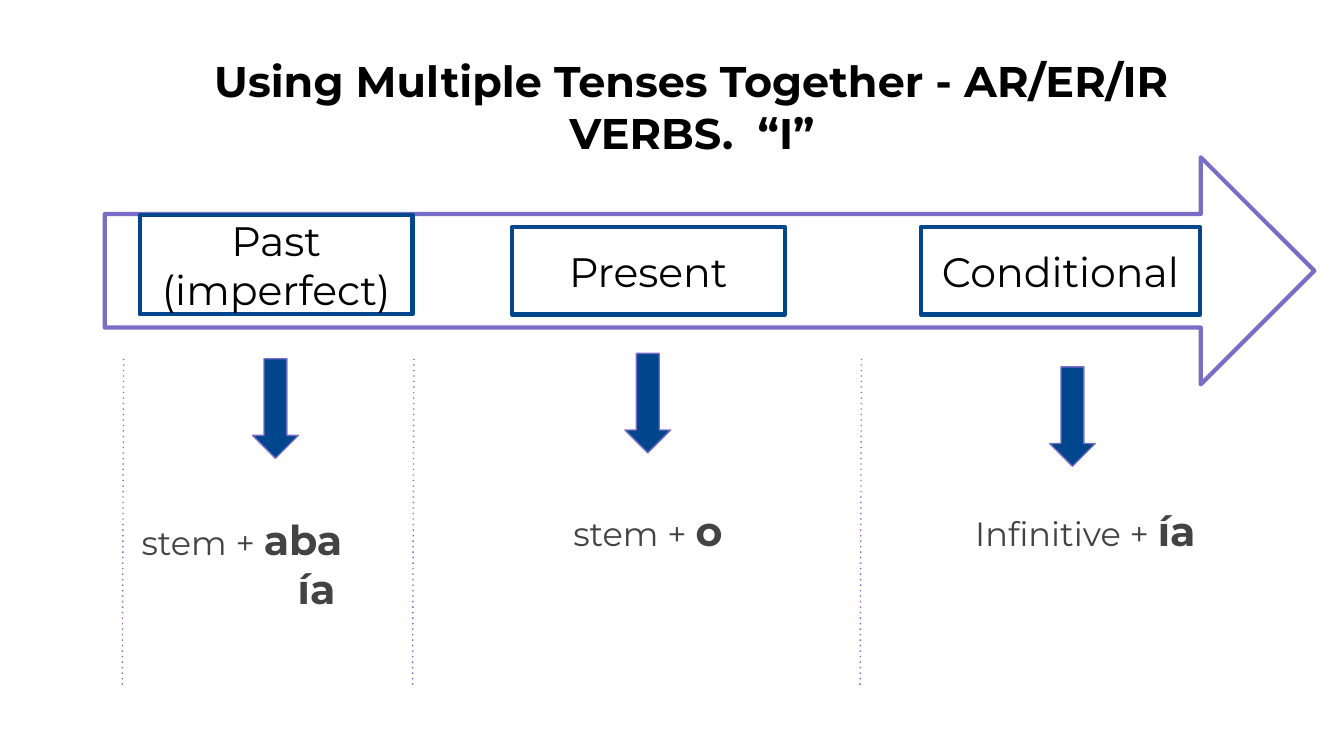
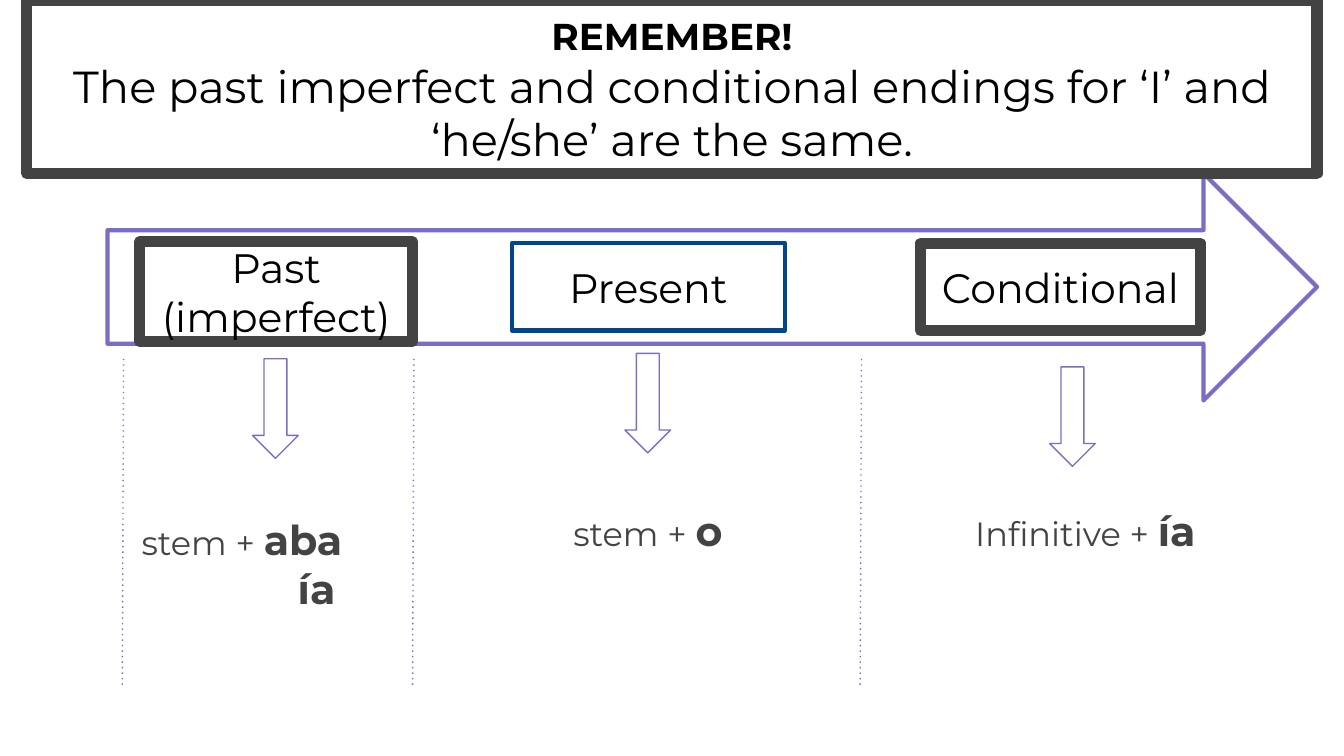
from pptx import Presentation
from pptx.dml.color import RGBColor
from pptx.enum.shapes import MSO_CONNECTOR, MSO_SHAPE
from pptx.enum.text import MSO_ANCHOR, PP_ALIGN
from pptx.oxml.ns import qn
from pptx.util import Inches, Pt
from lxml import etree

BLACK = RGBColor(0x00, 0x00, 0x00)
WHITE = RGBColor(0xFF, 0xFF, 0xFF)
GREY = RGBColor(0x43, 0x43, 0x43)
BLUE = RGBColor(0x00, 0x46, 0x8C)
PURPLE = RGBColor(0x78, 0x6E, 0xC8)

FONT = "Montserrat"
RECT = MSO_SHAPE.RECTANGLE
RIGHT = MSO_SHAPE.RIGHT_ARROW
DOWN = MSO_SHAPE.DOWN_ARROW
STRAIGHT = MSO_CONNECTOR.STRAIGHT
TOP = MSO_ANCHOR.TOP
MIDDLE = MSO_ANCHOR.MIDDLE
CENTER = PP_ALIGN.CENTER


def write(frame, paras, size=22, color=BLACK, bold=False, pad=0.1, anchor=TOP,
          indents=()):
    """Fill a frame; each paragraph is a list of (text, run format) pairs.

    Indents are (left, right) pairs, one for each paragraph."""
    frame.word_wrap = True
    frame.vertical_anchor = anchor
    frame.margin_left = frame.margin_right = Inches(pad)
    frame.margin_top = frame.margin_bottom = Inches(pad)
    for i, runs in enumerate(paras):
        para = frame.paragraphs[0] if i == 0 else frame.add_paragraph()
        para.alignment = CENTER
        if i < len(indents):
            for side, width in zip(("marL", "marR"), indents[i]):
                para._p.get_or_add_pPr().set(side, str(Inches(width)))
        for text, style in runs:
            run = para.add_run()
            run.text = text
            run.font.name = FONT
            run.font.size = Pt(style.get("size", size))
            run.font.bold = style.get("bold", bold)
            run.font.color.rgb = color


class Deck:
    def __init__(self):
        self.prs = Presentation()
        self.prs.slide_width = Inches(10)
        self.prs.slide_height = Inches(10 * 9 / 16)
        self.slide = None

    def page(self):
        self.slide = self.prs.slides.add_slide(self.prs.slide_layouts[6])

    def shape(self, kind, box, line, width, fill=None):
        shape = self.slide.shapes.add_shape(kind, *map(Inches, box))
        shape.shadow.inherit = False
        if fill is None:
            shape.fill.background()
        else:
            shape.fill.solid()
            shape.fill.fore_color.rgb = fill
        shape.line.color.rgb = line
        shape.line.width = Pt(width)
        return shape

    def text(self, box, paras, **style):
        frame = self.slide.shapes.add_textbox(*map(Inches, box)).text_frame
        write(frame, paras, **style)

    def tense(self, name, box, marked):
        line, width = (GREY, 6) if marked else (BLUE, 2.25)
        shape = self.shape(RECT, box, line, width, WHITE)
        write(shape.text_frame, [[(name, {})]], pad=0.05, anchor=MIDDLE)

    def rule(self, x):
        """Dotted line between columns."""
        line = self.slide.shapes.add_connector(
            STRAIGHT, Inches(x), Inches(2.67), Inches(x - 0.01), Inches(5.1))
        line.line.color.rgb = PURPLE
        line.line.width = Pt(0.75)
        props = line._element.spPr
        etree.SubElement(props.find(qn("a:ln")), qn("a:prstDash"), val="dot")
        etree.SubElement(props, qn("a:effectLst"))

    def arrow(self, x, y, fill):
        self.shape(DOWN, (x, y, 0.34, 0.74), PURPLE, 0.75, fill)

    def endings(self, fill):
        """Down arrows, verb endings and column rules."""
        big = {"size": 22, "bold": True}
        self.arrow(1.88, 2.67, fill)
        self.text((0.89, 3.73, 2.32, 1),
                  [[("stem + ", {}), ("aba", big)], [("ía", big)]],
                  size=18, color=GREY, indents=((0, 0.5), (0.61, 0)))
        self.text((3.93, 3.66, 1.78, 1), [[("stem + ", {}), ("o", big)]],
                  size=18, color=GREY)
        self.arrow(7.81, 2.73, fill)
        self.text((6.85, 3.66, 2.45, 1), [[("Infinitive + ", {}), ("ía", big)]],
                  size=18, color=GREY)
        for x in (0.92, 3.08, 6.41):
            self.rule(x)
        self.arrow(4.65, 2.63, fill)

    def timeline(self, left, top, past, row, marked=()):
        """Big arrow with the three tenses on it."""
        self.shape(RIGHT, (left, top, 9, 1.69), PURPLE, 2.25)
        for name, box in (("Past (imperfect)", (1.04, past, 2.03, 0.74)),
                          ("Present", (3.81, row, 2.03, 0.65)),
                          ("Conditional", (6.85, row, 2.08, 0.65))):
            self.tense(name, box, name in marked)


def main():
    deck = Deck()

    # Slide 1: the three tenses
    deck.page()
    deck.timeline(0.78, 1.17, past=1.6, row=1.69)
    deck.text((1.09, 0.31, 8.12, 0.61),
              [[("Using Multiple Tenses Together - AR/ER/IR VERBS.  “I”", {})]],
              size=23, bold=True)
    deck.endings(BLUE)

    # Slide 2: the matching endings
    deck.page()
    deck.timeline(0.8, 1.29, past=1.8, row=1.81,
                  marked=("Past (imperfect)", "Conditional"))
    banner = deck.shape(RECT, (0.2, 0, 9.6, 1.29), GREY, 6)
    write(banner.text_frame,
          [[("REMEMBER!", {"size": 20, "bold": True})],
           [("The past imperfect and conditional endings for ‘I’ and "
             "‘he/she’ are the same.", {})]], size=24)
    deck.endings(None)

    deck.prs.save("out.pptx")


if __name__ == "__main__":
    main()
